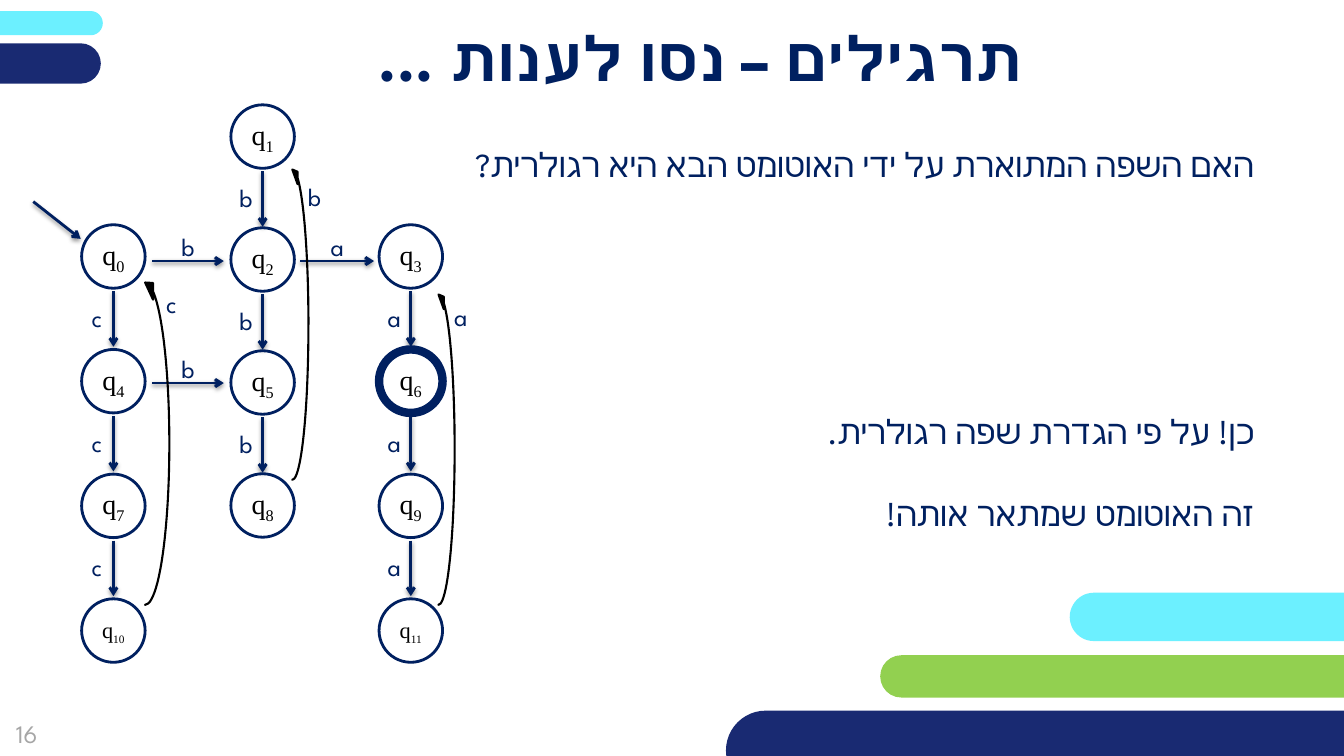
from lxml.etree import SubElement
from pptx import Presentation
from pptx.dml.color import RGBColor
from pptx.enum.shapes import MSO_CONNECTOR, MSO_SHAPE
from pptx.enum.text import MSO_ANCHOR, MSO_AUTO_SIZE, PP_ALIGN
from pptx.oxml.ns import qn
from pptx.util import Inches, Pt

NAVY = RGBColor(0x00, 0x20, 0x60)
INDIGO = RGBColor(0x19, 0x2A, 0x72)
CYAN = RGBColor(0x6C, 0xF0, 0xFF)
GREEN = RGBColor(0x92, 0xD0, 0x50)
GRAY = RGBColor(0xA6, 0xA6, 0xA6)
BLACK = RGBColor(0, 0, 0)

TEXT_FONT = "League Spartan"
STATE_FONT = "Times New Roman"
DIAMETER = 0.63

# left, top, width, height, colour
BARS = [
    (7.2, 7.05, 6.55, 0.79, INDIGO),
    (10.61, 5.88, 3.82, 0.48, CYAN),
    (-1.34, 0.11, 2.36, 0.24, CYAN),
    (-2.25, 0.43, 3.25, 0.4, INDIGO),
    (8.73, 6.5, 5.21, 0.42, GREEN),
]
# left, top of first state, row pitch, letter on the arrows, state numbers
COLUMNS = [
    (0.81, 2.23, 1.237, "c", (0, 4, 7, 10)),
    (2.29, 1.04, 1.22, "b", (1, 2, 5, 8)),
    (3.76, 2.23, 1.237, "a", (3, 6, 9, 11)),
]
# start x, end x, y, letter
CROSSINGS = [(1.51, 2.22, 2.59, "b"), (1.51, 2.22, 3.8, "b"), (2.98, 3.71, 2.59, "a")]
# left, top, width, height, head width, letter, letter left, letter top
RETURNS = [
    (-0.08, 4.24, 3.28, 0.24, 0.688, "c", 1.53, 2.81),
    (1.41, 3.11, 3.14, 0.16, 0.77, "b", 2.95, 1.75),
    (2.86, 4.35, 3.14, 0.16, 0.77, "a", 4.4, 2.94),
]
# text, space before in points
ANSWERS = [
    ("האם השפה המתוארת על ידי האוטומט הבא היא רגולרית?", 0),
    ("כן! על פי הגדרת שפה רגולרית.", 165),
    ("זה האוטומט שמתאר אותה!", 32.5),
]
ACCEPTING_STATE = 6


def set_font(paragraph, size, color, name=TEXT_FONT):
    paragraph.font.size = Pt(size)
    paragraph.font.name = name
    paragraph.font.color.rgb = color


def add_preset(slide, preset, left, top, width, height):
    shape = slide.shapes.add_shape(
        preset, Inches(left), Inches(top), Inches(width), Inches(height))
    shape.shadow.inherit = False
    return shape


def add_bar(slide, left, top, width, height, color):
    bar = add_preset(slide, MSO_SHAPE.ROUNDED_RECTANGLE, left, top, width, height)
    bar.adjustments[0] = 0.5
    bar.fill.solid()
    bar.fill.fore_color.rgb = color
    bar.line.fill.background()


def add_label(slide, text, left, top, width=0.34, height=0.4, color=NAVY):
    box = slide.shapes.add_textbox(
        Inches(left), Inches(top), Inches(width), Inches(height))
    frame = box.text_frame
    frame.word_wrap = False
    paragraph = frame.paragraphs[0]
    paragraph.text = text
    paragraph.alignment = PP_ALIGN.CENTER
    set_font(paragraph, 18, color)
    return box


def add_state(slide, number, left, top):
    state = add_preset(slide, MSO_SHAPE.OVAL, left, top, DIAMETER, DIAMETER)
    state.fill.background()
    state.line.color.rgb = NAVY
    state.line.width = Pt(6 if number == ACCEPTING_STATE else 2)
    frame = state.text_frame
    frame.word_wrap = False
    paragraph = frame.paragraphs[0]
    paragraph.alignment = PP_ALIGN.CENTER
    set_font(paragraph, 16 if number > 9 else 20, BLACK, STATE_FONT)
    paragraph.add_run().text = "q"
    subscript = paragraph.add_run()
    subscript.text = str(number)
    subscript._r.get_or_add_rPr().set("baseline", "-25000")
    if number > 9:
        subscript.font.size = Pt(14)


def add_arrow(slide, start_x, start_y, end_x, end_y):
    arrow = slide.shapes.add_connector(
        MSO_CONNECTOR.STRAIGHT, Inches(start_x), Inches(start_y),
        Inches(end_x), Inches(end_y))
    arrow.line.color.rgb = NAVY
    arrow.line.width = Pt(2)
    properties = arrow._element.spPr
    SubElement(properties.find(qn("a:ln")), qn("a:tailEnd"), type="arrow")
    # Soft shadow falling straight down
    effects = SubElement(properties, qn("a:effectLst"))
    shadow = SubElement(effects, qn("a:outerShdw"), blurRad=str(Pt(3.1)),
                        dist=str(Pt(1.6)), dir="5400000", rotWithShape="0")
    color = SubElement(shadow, qn("a:srgbClr"), val=str(BLACK))
    SubElement(color, qn("a:alpha"), val="38000")


def add_column(slide, left, first_top, pitch, letter, numbers):
    center = left + DIAMETER / 2
    for row, number in enumerate(numbers):
        top = first_top + row * pitch
        add_state(slide, number, left, top)
        if number != numbers[-1]:
            start = top + DIAMETER + 0.03
            add_arrow(slide, center, start, center, start + 0.55)
            add_label(slide, letter, left - 0.02, start + 0.06)


def add_return(slide, left, top, width, height, head, letter, label_left, label_top):
    curve = add_preset(slide, MSO_SHAPE.CURVED_DOWN_ARROW, left, top, width, height)
    for index, value in enumerate((0, head, 0.326)):
        curve.adjustments[index] = value
    curve.rotation = 90
    curve._element.spPr.find(qn("a:xfrm")).set("flipH", "1")
    curve.fill.solid()
    curve.fill.fore_color.rgb = BLACK
    curve.line.color.rgb = BLACK
    curve.line.width = Pt(1.5)
    add_label(slide, letter, label_left, label_top)


def place(placeholder, left, top, width, height):
    placeholder.left, placeholder.top = Inches(left), Inches(top)
    placeholder.width, placeholder.height = Inches(width), Inches(height)
    placeholder.text_frame.auto_size = MSO_AUTO_SIZE.NONE
    return placeholder.text_frame


def format_hebrew(paragraph, size, alignment):
    paragraph.alignment = alignment
    set_font(paragraph, size, NAVY)
    properties = paragraph._p.get_or_add_pPr()
    properties.set("rtl", "1")
    SubElement(properties.find(qn("a:defRPr")), qn("a:cs"), typeface=TEXT_FONT)
    return properties


def fill_title(title):
    frame = place(title, 1.12, 0.17, 11.65, 0.79)
    frame.margin_left = frame.margin_right = frame.margin_top = frame.margin_bottom = 0
    frame.vertical_anchor = MSO_ANCHOR.MIDDLE
    paragraph = frame.paragraphs[0]
    paragraph.text = "תרגילים – נסו לענות ..."
    paragraph.font.bold = True
    format_hebrew(paragraph, 44, PP_ALIGN.CENTER)


def fill_body(body):
    frame = place(body, 0.33, 1.42, 12.21, 4)
    for index, (text, gap) in enumerate(ANSWERS):
        paragraph = frame.add_paragraph() if index else frame.paragraphs[0]
        paragraph.text = text
        paragraph.line_spacing = 0.9
        paragraph.space_before = Pt(gap)
        paragraph.space_after = Pt(0)
        properties = format_hebrew(paragraph, 24, PP_ALIGN.RIGHT)
        properties.set("marL", "0")
        properties.set("indent", "0")
        bullet = SubElement(properties, qn("a:buNone"))
        properties.find(qn("a:defRPr")).addprevious(bullet)


def main():
    presentation = Presentation()
    presentation.slide_width, presentation.slide_height = Inches(13.33), Inches(7.5)
    slide = presentation.slides.add_slide(presentation.slide_layouts[1])

    # Corner decoration and page number
    for bar in BARS:
        add_bar(slide, *bar)
    page = add_label(slide, "16", -0.18, 6.99, 0.89, 0.57, GRAY)
    page.text_frame.vertical_anchor = MSO_ANCHOR.MIDDLE

    # Automaton
    add_arrow(slide, 0.33, 2, 0.8, 2.37)
    for column in COLUMNS:
        add_column(slide, *column)
    for start, end, height, letter in CROSSINGS:
        add_arrow(slide, start, height, end, height)
        add_label(slide, letter, (start + end) / 2 - 0.17, height - 0.34)
    for curve in RETURNS:
        add_return(slide, *curve)

    # Title, question and answer
    fill_title(slide.shapes.title)
    fill_body(slide.placeholders[1])
    presentation.save("out.pptx")


if __name__ == "__main__":
    main()
